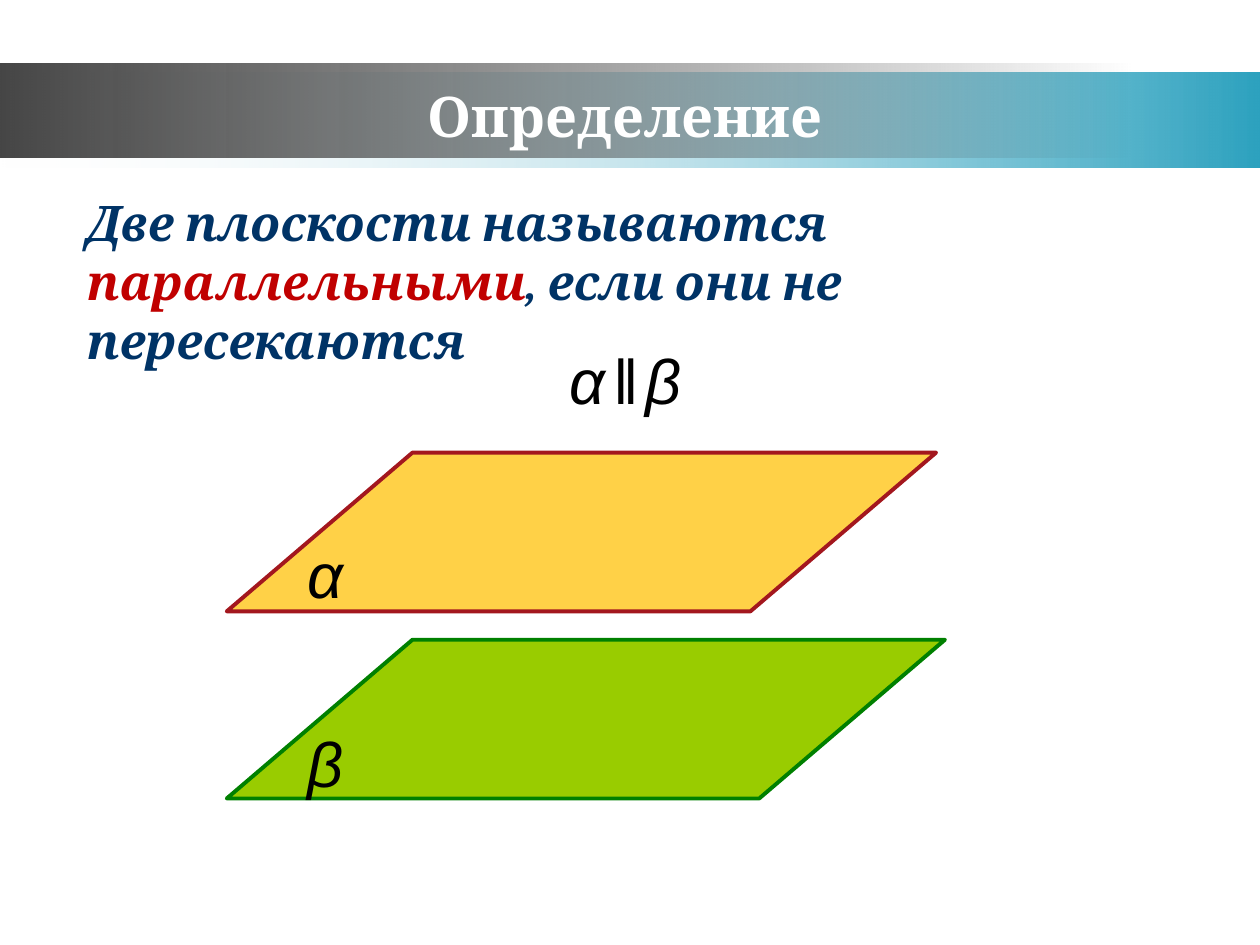
"""Build a slide that defines parallel planes."""
from dataclasses import dataclass

from lxml import etree
from pptx import Presentation
from pptx.dml.color import RGBColor
from pptx.enum.shapes import MSO_SHAPE
from pptx.enum.text import MSO_ANCHOR, MSO_AUTO_SIZE, PP_ALIGN
from pptx.oxml.ns import qn
from pptx.util import Inches, Pt

RECTANGLE = MSO_SHAPE.RECTANGLE
PARALLELOGRAM = MSO_SHAPE.PARALLELOGRAM
MIDDLE, TOP = MSO_ANCHOR.MIDDLE, MSO_ANCHOR.TOP
CENTER = PP_ALIGN.CENTER
NO_AUTO_SIZE = MSO_AUTO_SIZE.NONE
WIDTH, HEIGHT = Inches(10), Inches(7.5)
COLORS = {
    "pale": "F1F6F8", "teal": "2DA2BF", "gray": "464646", "dark": "323232",
    "white": "FFFFFF", "black": "000000", "navy": "003366", "red": "C00000",
    "green": "99CC00", "green edge": "008000", "amber": "FFC000", "amber edge": "A3171E",
}


@dataclass(frozen=True)
class Box:
    """A frame in shares of the slide's width and height."""
    left: float
    top: float
    width: float
    height: float

    def lengths(self) -> tuple:
        """Return the frame in slide units."""
        return (int(self.left * WIDTH), int(self.top * HEIGHT),
                int(self.width * WIDTH), int(self.height * HEIGHT))


@dataclass(frozen=True)
class Run:
    """A piece of text with its own format."""
    text: str
    size: int = 36
    color: str = "black"
    font: str = "Arial"
    bold: bool = False
    italic: bool = True


@dataclass(frozen=True)
class Band:
    """A header band that fades from one colour to another."""
    box: Box
    stops: tuple
    opacities: tuple


@dataclass(frozen=True)
class Plane:
    """A slanted plane with its fill and edge."""
    box: Box
    fill: str
    edge: str
    opacity: int = 100


@dataclass(frozen=True)
class Label:
    """A text box with its runs."""
    box: Box
    runs: tuple
    wrap: bool = False
    anchor: MSO_ANCHOR = TOP


BANDS = (
    Band(Box(0, 0.077, 1, 0.1), ("pale", "teal"), (0, 100)),
    Band(Box(0, 0.067, 0.9, 0.1), ("gray", "dark"), (100, 0)),
)
TITLE_BOX = Box(0.092, 0.08, 0.808, 0.083)
TITLE = Run("Определение", 32, "white", "Cambria", True, False)
DEFINITION = Label(Box(0.059, 0.197, 0.883, 0.139), (
    Run("Две плоскости называются ", 28, "navy", "Cambria", True),
    Run("параллельными", 28, "red", "Cambria", True),
    Run(", если они не пересекаются", 28, "navy", "Cambria", True),
), True)
PLANES = (
    Plane(Box(0.18, 0.677, 0.57, 0.168), "green", "green edge"),
    Plane(Box(0.18, 0.479, 0.563, 0.168), "amber", "amber edge", 72),
)
LABELS = (
    Label(Box(0.234, 0.559, 0.054, 0.095), (Run("α"),), True, MIDDLE),
    Label(Box(0.234, 0.76, 0.049, 0.095), (Run("β"),)),
    Label(Box(0.442, 0.355, 0.116, 0.095), (
        Run("α"), Run(" ", 16), Run("‖", italic=False), Run(" ", 14), Run("β"),
    )),
)


def color_of(name: str) -> RGBColor:
    """Look up a named colour."""
    return RGBColor.from_string(COLORS[name])


def set_opacities(shape, opacities: tuple) -> None:
    """Give the first colours of a shape their opacity in percent."""
    for color, opacity in zip(shape.element.spPr.iter(qn("a:srgbClr")), opacities):
        if opacity < 100:
            etree.SubElement(color, qn("a:alpha"), val=str(opacity * 1000))


def add_run(paragraph, piece: Run) -> None:
    """Append a formatted run to a paragraph."""
    run = paragraph.add_run()
    run.text = piece.text
    font = run.font
    font.name, font.size = piece.font, Pt(piece.size)
    font.bold, font.italic = piece.bold, piece.italic
    font.color.rgb = color_of(piece.color)


def add_band(slide, band: Band) -> None:
    """Draw a header band."""
    shape = slide.shapes.add_shape(RECTANGLE, *band.box.lengths())
    shape.shadow.inherit = False
    shape.line.fill.background()
    shape.fill.gradient()
    shape.fill.gradient_angle = 0
    for stop, name in zip(shape.fill.gradient_stops, band.stops):
        stop.color.rgb = color_of(name)
    set_opacities(shape, band.opacities)


def place_title(slide) -> None:
    """Move the title in front of the bands and fill it."""
    title = slide.shapes.title
    title.element.getparent().append(title.element)
    title.left, title.top, title.width, title.height = TITLE_BOX.lengths()
    frame = title.text_frame
    frame.auto_size, frame.vertical_anchor = NO_AUTO_SIZE, MIDDLE
    frame.paragraphs[0].alignment = CENTER
    add_run(frame.paragraphs[0], TITLE)


def add_plane(slide, plane: Plane) -> None:
    """Draw a plane as a parallelogram."""
    shape = slide.shapes.add_shape(PARALLELOGRAM, *plane.box.lengths())
    shape.shadow.inherit = False
    shape.adjustments[0] = 1.17
    shape.fill.solid()
    shape.fill.fore_color.rgb = color_of(plane.fill)
    shape.line.color.rgb = color_of(plane.edge)
    shape.line.width = Pt(2.25)
    set_opacities(shape, (plane.opacity,))


def add_label(slide, label: Label) -> None:
    """Add a text box run by run."""
    frame = slide.shapes.add_textbox(*label.box.lengths()).text_frame
    frame.word_wrap, frame.vertical_anchor = label.wrap, label.anchor
    for piece in label.runs:
        add_run(frame.paragraphs[0], piece)


def main() -> None:
    """Build and save the presentation."""
    presentation = Presentation()
    presentation.slide_width, presentation.slide_height = WIDTH, HEIGHT
    slide = presentation.slides.add_slide(presentation.slide_layouts[5])
    for band in BANDS:
        add_band(slide, band)
    place_title(slide)
    add_label(slide, DEFINITION)
    for plane in PLANES:
        add_plane(slide, plane)
    for label in LABELS:
        add_label(slide, label)
    presentation.save("out.pptx")


if __name__ == "__main__":
    main()
